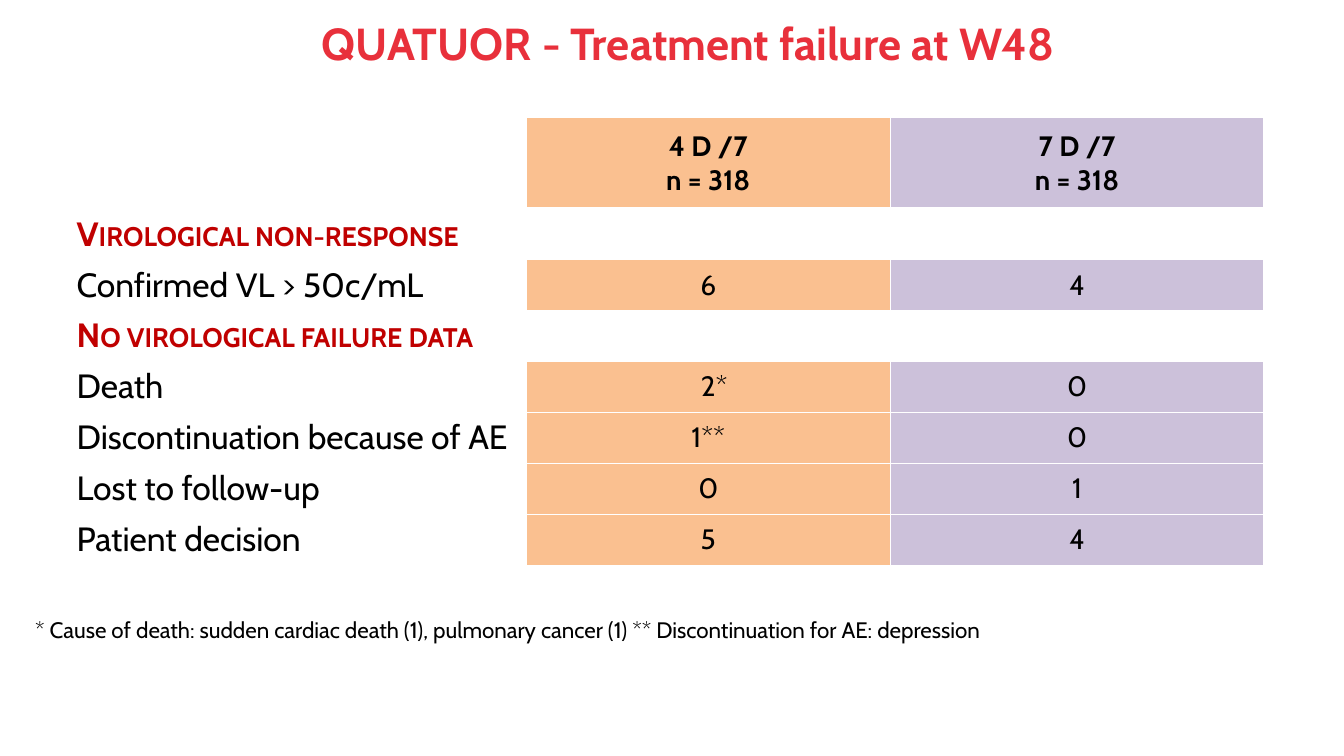
from pptx import Presentation
from pptx.dml.color import RGBColor
from pptx.enum.text import MSO_ANCHOR, PP_ALIGN
from pptx.oxml import parse_xml
from pptx.oxml.ns import nsdecls
from pptx.util import Pt

CENTER, LEFT = PP_ALIGN.CENTER, PP_ALIGN.LEFT
MIDDLE, TOP = MSO_ANCHOR.MIDDLE, MSO_ANCHOR.TOP

FONT = "Cabin"
BLACK = RGBColor(0x00, 0x00, 0x00)
WHITE = RGBColor(0xFF, 0xFF, 0xFF)
RED = RGBColor(0xE8, 0x30, 0x3B)
DARK = RGBColor(0xC0, 0x00, 0x00)
ORANGE = RGBColor(0xFA, 0xC0, 0x90)
PURPLE = RGBColor(0xCC, 0xC1, 0xDA)
FILLS = [WHITE, ORANGE, PURPLE]

WIDTHS = [330.5, 260, 267]
HEIGHTS = [64.8] + [34.5] * 6 + [36.7]
ROWS = [
    ["", "4 D /7\nn = 318", "7 D /7\nn = 318"],
    ["Virological non-response"],
    ["Confirmed VL > 50c/mL", "6", "4"],
    ["No virological failure data"],
    ["Death", "2*", "0"],
    ["Discontinuation because of AE", "1**", "0"],
    ["Lost to follow-up", "0", "1"],
    ["Patient decision", "5", "4"],
]
NOTE = ("* Cause of death: sudden cardiac death (1), pulmonary cancer (1) "
        "** Discontinuation for AE: depression")


def write(frame, text, size, color, bold=False, align=LEFT, small=False):
    frame.text = text
    for para in frame.paragraphs:
        para.alignment = align
        for run in para.runs:
            font = run.font
            font.name, font.size, font.bold = FONT, Pt(size), bold
            font.color.rgb = color
            if small:
                run._r.get_or_add_rPr().set("cap", "small")


def add_text(slide, box, text, size, color, anchor=TOP, **style):
    frame = slide.shapes.add_textbox(*map(Pt, box)).text_frame
    frame.word_wrap = True
    frame.vertical_anchor = anchor
    write(frame, text, size, color, **style)


def add_lines(cell, base):
    props = cell._tc.get_or_add_tcPr()
    for side, width in (("L", 1), ("R", 1), ("T", 1), ("B", base)):
        props.append(parse_xml(
            f'<a:ln{side} {nsdecls("a")} w="{Pt(width)}"><a:solidFill>'
            f'<a:srgbClr val="{WHITE}"/></a:solidFill></a:ln{side}>'))


def set_pads(cell, side, top, base):
    cell.margin_left = cell.margin_right = Pt(side)
    cell.margin_top, cell.margin_bottom = Pt(top), Pt(base)


def fill_cell(cell, text, row, col):
    head, group = row == 0, len(ROWS[row]) == 1
    add_lines(cell, 3 if head else 1)
    cell.fill.solid()
    cell.fill.fore_color.rgb = WHITE if group else FILLS[col]
    if head:
        set_pads(cell, 0.72, 0.72, 0)
    else:
        set_pads(cell, 9.36, 3.6, 3.6)
    if not text:
        return
    if col:
        cell.vertical_anchor = MIDDLE
        write(cell.text_frame, text, 20, BLACK, bold=head, align=CENTER)
    else:
        write(cell.text_frame, text, 24, DARK if group else BLACK,
              bold=group, small=group)


def add_grid(slide):
    frame = slide.shapes.add_table(
        len(ROWS), len(WIDTHS), Pt(45.4), Pt(84.2),
        Pt(sum(WIDTHS)), Pt(sum(HEIGHTS)))
    table = frame.table
    table.first_row = table.horz_banding = False
    for col, width in enumerate(WIDTHS):
        table.columns[col].width = Pt(width)
    for row, height in enumerate(HEIGHTS):
        table.rows[row].height = Pt(height)
        for col in range(len(WIDTHS)):
            text = ROWS[row][col] if col < len(ROWS[row]) else ""
            fill_cell(table.cell(row, col), text, row, col)
    table.cell(3, 0).merge(table.cell(3, 2))
    table.cell(3, 0).vertical_anchor = MIDDLE
    table.cell(4, 1).margin_left = Pt(18)


def main():
    deck = Presentation()
    deck.slide_width, deck.slide_height = Pt(960), Pt(540)
    slide = deck.slides.add_slide(deck.slide_layouts[6])
    add_grid(slide)
    add_text(slide, (18, 436.3, 786.2, 46), NOTE, 16, BLACK)
    add_text(slide, (69.8, 10.8, 843.8, 39.6),
             "QUATUOR - Treatment failure at W48", 32, RED,
             anchor=MIDDLE, bold=True, align=CENTER)
    deck.save("out.pptx")


if __name__ == "__main__":
    main()
